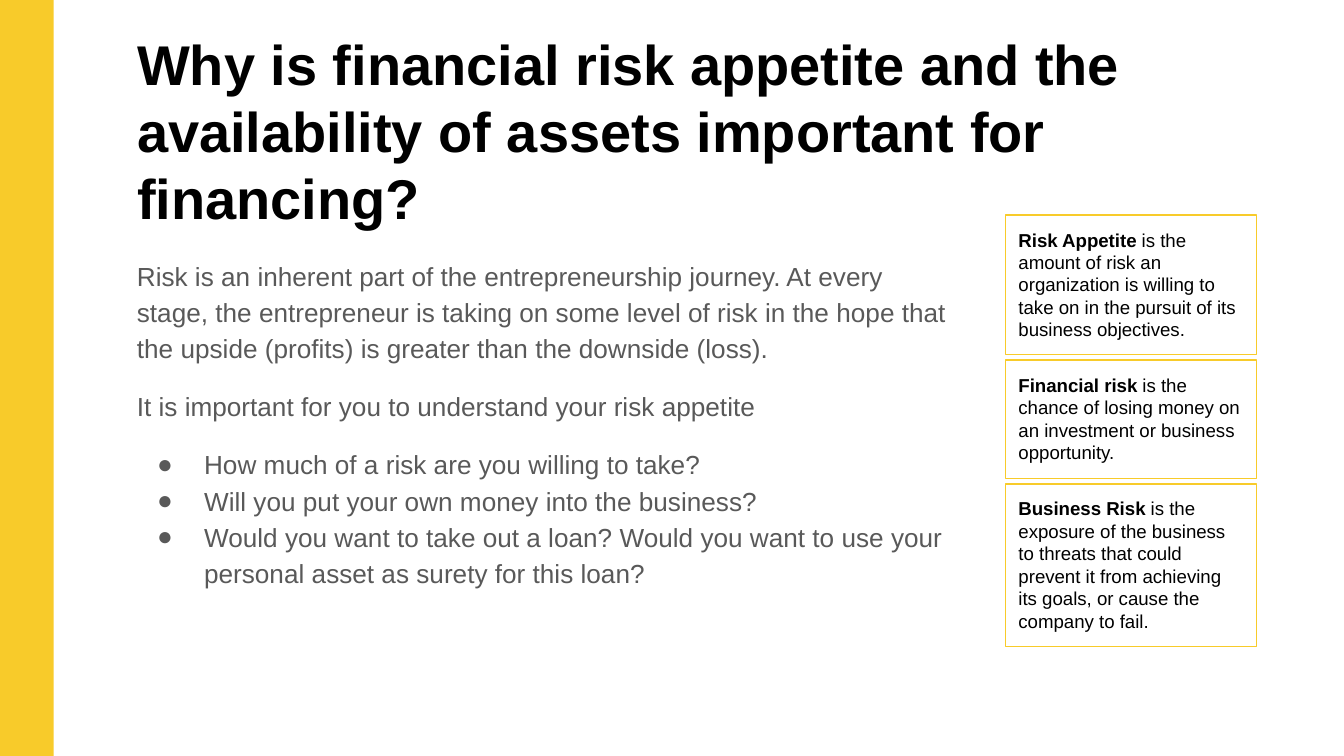
from lxml.etree import SubElement
from pptx import Presentation
from pptx.dml.color import RGBColor
from pptx.enum.shapes import MSO_SHAPE
from pptx.enum.text import MSO_ANCHOR, MSO_AUTO_SIZE, PP_ALIGN
from pptx.oxml.ns import qn
from pptx.util import Inches, Pt

COLORS = {"accent": "F8CB2A", "title": "000000", "body": "595959"}
FONT = "Arial"
WIDTH = Inches(10)
HEIGHT = WIDTH * 9 // 16
UNIT = WIDTH / 100  # square grid of 100 columns

TITLE = "Why is financial risk appetite and the availability of assets important for financing?"
INTRO = [
    "Risk is an inherent part of the entrepreneurship journey. At every stage, "
    "the entrepreneur is taking on some level of risk in the hope that the upside "
    "(profits) is greater than the downside (loss).",
    "It is important for you to understand your risk appetite",
]
QUESTIONS = [
    "How much of a risk are you willing to take?",
    "Will you put your own money into the business?",
    "Would you want to take out a loan? Would you want to use your personal asset "
    "as surety for this loan?",
]
# term, meaning, height in grid units
DEFINITIONS = [
    ("Risk Appetite", " is the amount of risk an organization is willing to take on "
     "in the pursuit of its business objectives.", 10.4),
    ("Financial risk", " is the chance of losing money on an investment or business "
     "opportunity.", 8.8),
    ("Business Risk", " is the exposure of the business to threats that could prevent "
     "it from achieving its goals, or cause the company to fail.", 12.1),
]


def rgb(name):
    return RGBColor.from_string(COLORS[name])


def grid(*units):
    return [round(u * UNIT) for u in units]


def style_run(r, size, color, bold=False):
    r.font.name, r.font.size, r.font.bold = FONT, Pt(size), bold
    r.font.color.rgb = rgb(color)


def set_frame(tf):
    tf.word_wrap = True
    tf.auto_size = MSO_AUTO_SIZE.NONE
    tf.vertical_anchor = MSO_ANCHOR.TOP
    tf.margin_left = tf.margin_right = tf.margin_top = tf.margin_bottom = Inches(0.1)


def add_bullet(p):
    pPr = p._p.get_or_add_pPr()
    pPr.set("marL", str(Inches(0.5)))
    pPr.set("indent", str(Inches(-0.35)))
    color = SubElement(pPr, qn("a:buClr"))
    SubElement(color, qn("a:srgbClr"), val=COLORS["body"])
    SubElement(pPr, qn("a:buFont"), typeface=FONT)
    SubElement(pPr, qn("a:buChar"), char="●")


def add_side_band(slide, width):
    sp = slide.shapes.add_shape(MSO_SHAPE.RECTANGLE, 0, 0, *grid(width), HEIGHT)
    sp.shadow.inherit = False
    sp.fill.solid()
    sp.fill.fore_color.rgb = rgb("accent")
    sp.line.fill.background()


def set_title(slide, left, top, width, height):
    sp = slide.shapes.title
    sp.left, sp.top, sp.width, sp.height = grid(left, top, width, height)
    tf = sp.text_frame
    tf.text = TITLE
    set_frame(tf)
    p = tf.paragraphs[0]
    p.alignment = PP_ALIGN.LEFT
    p.line_spacing = 1.0
    style_run(p.runs[0], 30, "title", bold=True)


def add_body(slide, left, top, width, height):
    tf = slide.shapes.add_textbox(*grid(left, top, width, height)).text_frame
    set_frame(tf)
    tf.text = "\n".join(INTRO + QUESTIONS)
    for i, p in enumerate(tf.paragraphs):
        if i >= len(INTRO):
            add_bullet(p)
        p.line_spacing = 1.15
        p.space_before = Pt(12 if 0 < i <= len(INTRO) else 0)
        style_run(p.runs[0], 14, "body")


def add_definitions(slide, left, top, width, gap):
    """Stack the outlined definition boxes downwards from the top."""
    for term, meaning, height in DEFINITIONS:
        sp = slide.shapes.add_shape(MSO_SHAPE.RECTANGLE, *grid(left, top, width, height))
        sp.shadow.inherit = False
        sp.fill.background()
        sp.line.color.rgb = rgb("accent")
        sp.line.width = Pt(0.75)
        set_frame(sp.text_frame)
        p = sp.text_frame.paragraphs[0]
        p.alignment = PP_ALIGN.LEFT
        for text, bold in ((term, True), (meaning, False)):
            r = p.add_run()
            r.text = text
            style_run(r, 10, "title", bold)
        top += height + gap


def main():
    prs = Presentation()
    prs.slide_width, prs.slide_height = WIDTH, HEIGHT
    slide = prs.slides.add_slide(prs.slide_layouts[5])
    add_side_band(slide, 4)
    set_title(slide, 9.2, 1.2, 84.3, 4.5)
    add_body(slide, 9.2, 18, 63.2, 32)
    add_definitions(slide, 74.8, 16, 18.7, gap=0.4)
    prs.save("out.pptx")


if __name__ == "__main__":
    main()
